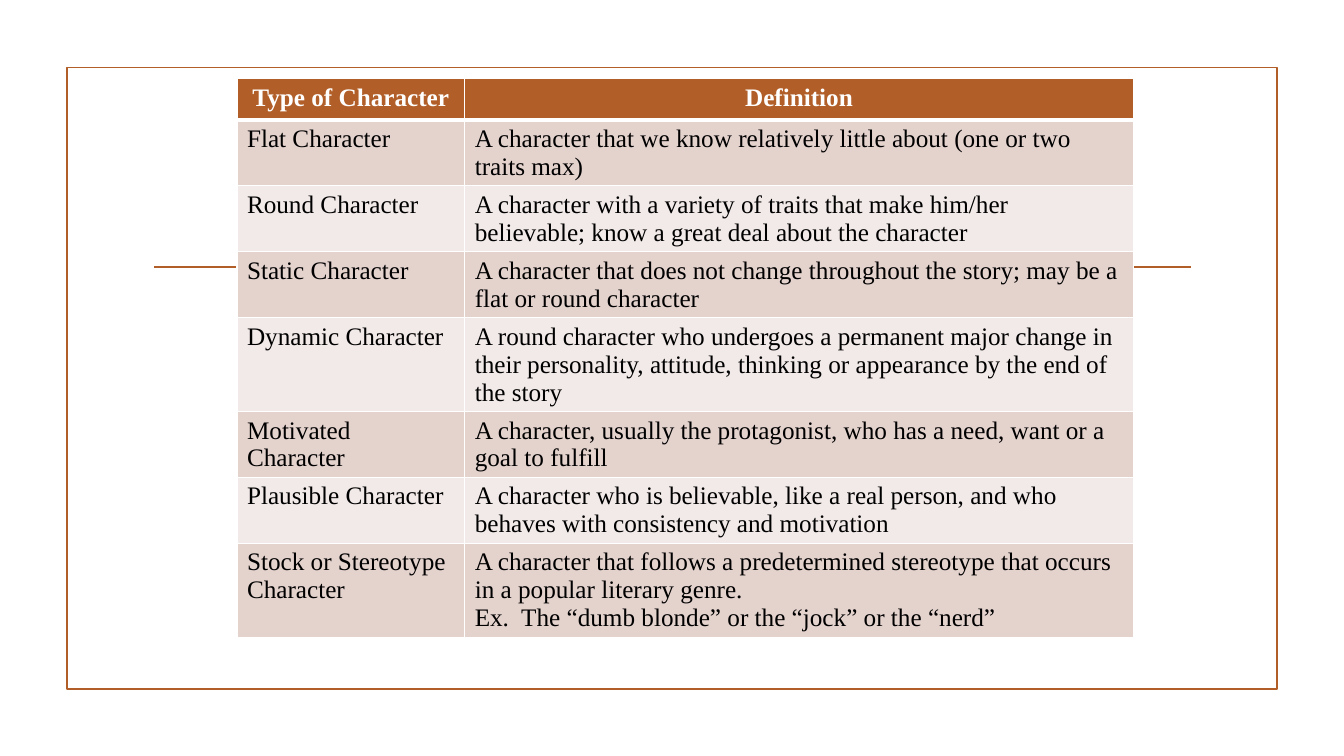
from dataclasses import dataclass

from lxml import etree
from pptx import Presentation
from pptx.dml.color import RGBColor
from pptx.enum.shapes import MSO_CONNECTOR, MSO_SHAPE
from pptx.enum.text import PP_ALIGN
from pptx.oxml.ns import qn
from pptx.util import Inches, Pt

RECTANGLE = MSO_SHAPE.RECTANGLE
STRAIGHT = MSO_CONNECTOR.STRAIGHT
CENTER = PP_ALIGN.CENTER
LEFT = PP_ALIGN.LEFT

SLIDE_WIDTH = Inches(13.33)
SLIDE_HEIGHT = Inches(7.5)


@dataclass(frozen=True)
class Theme:
    """Colours, type and line weights of the slide."""

    accent: str = "B15E28"
    paper: str = "FFFFFF"
    ink: str = "000000"
    bands: tuple = ("E4D2CD", "F2EAE8")
    font: str = "Times New Roman"
    size: float = 18
    rule: float = 1.25
    grid: float = 1
    header_rule: float = 3


THEME = Theme()

HEADINGS = ("Type of Character", "Definition")
COLUMN_SHARES = (16.95, 49.74)
HEADER_SHARE = 5.47
LINE_SHARE = 3.69
PADDING_SHARE = 1.33

CHARACTERS = (
    ("Flat Character", "A character that we know relatively little about (one or two traits max)", 2),
    ("Round Character", "A character with a variety of traits that make him/her believable; "
     "know a great deal about the character", 2),
    ("Static Character", "A character that does not change throughout the story; "
     "may be a flat or round character", 2),
    ("Dynamic Character", "A round character who undergoes a permanent major change in their "
     "personality, attitude, thinking or appearance by the end of the story", 3),
    ("Motivated Character", "A character, usually the protagonist, who has a need, "
     "want or a goal to fulfill", 2),
    ("Plausible Character", "A character who is believable, like a real person, "
     "and who behaves with consistency and motivation", 2),
    ("Stock or Stereotype Character", "A character that follows a predetermined stereotype "
     "that occurs in a popular literary genre.\n"
     "Ex.  The “dumb blonde” or the “jock” or the “nerd”", 3),
)


def across(share):
    """Return a percentage of the slide width."""
    return int(SLIDE_WIDTH * share / 100)


def down(share):
    """Return a percentage of the slide height."""
    return int(SLIDE_HEIGHT * share / 100)


def color(code):
    """Return the colour for a hex code."""
    return RGBColor.from_string(code)


def style_rule(line):
    """Give a line the accent colour and weight."""
    line.color.rgb = color(THEME.accent)
    line.width = Pt(THEME.rule)


def add_frame(slide, left, top, width, height):
    """Draw an unfilled accent frame."""
    frame = slide.shapes.add_shape(RECTANGLE, across(left), down(top), across(width), down(height))
    frame.shadow.inherit = False
    frame.fill.background()
    style_rule(frame.line)


def add_rule(slide, start, end, height):
    """Draw a horizontal accent rule."""
    rule = slide.shapes.add_connector(STRAIGHT, across(start), down(height), across(end), down(height))
    style_rule(rule.line)
    etree.SubElement(rule._element.spPr, qn("a:effectLst"))


def set_borders(cell, top, bottom):
    """Outline a cell in the paper colour."""
    weights = {"L": THEME.grid, "R": THEME.grid, "T": top, "B": bottom}
    properties = cell._tc.get_or_add_tcPr()
    for position, (side, weight) in enumerate(weights.items()):
        border = etree.Element(qn(f"a:ln{side}"), w=str(Pt(weight)))
        fill = etree.SubElement(border, qn("a:solidFill"))
        etree.SubElement(fill, qn("a:srgbClr"), val=THEME.paper)
        properties.insert(position, border)


def fill_cell(cell, text, fill, ink, bold, alignment):
    """Write and format the text of a cell."""
    cell.fill.solid()
    cell.fill.fore_color.rgb = color(fill)
    cell.text_frame.text = text
    for paragraph in cell.text_frame.paragraphs:
        paragraph.alignment = alignment
        for run in paragraph.runs:
            run.font.name = THEME.font
            run.font.size = Pt(THEME.size)
            run.font.bold = bold
            run.font.color.rgb = color(ink)


def add_character_table(slide, left, top):
    """Lay out the character types and their definitions."""
    row_shares = [HEADER_SHARE] + [PADDING_SHARE + LINE_SHARE * lines for *_, lines in CHARACTERS]
    table = slide.shapes.add_table(
        len(row_shares), len(HEADINGS), across(left), down(top),
        across(sum(COLUMN_SHARES)), down(sum(row_shares))).table
    for column, share in zip(table.columns, COLUMN_SHARES):
        column.width = across(share)
    for row, share in zip(table.rows, row_shares):
        row.height = down(share)
    for cell, heading in zip(table.rows[0].cells, HEADINGS):
        fill_cell(cell, heading, THEME.accent, THEME.paper, True, CENTER)
        set_borders(cell, THEME.grid, THEME.header_rule)
    for index, (kind, definition, _) in enumerate(CHARACTERS):
        band = THEME.bands[index % len(THEME.bands)]
        upper = THEME.grid if index else THEME.header_rule
        for cell, text in zip(table.rows[index + 1].cells, (kind, definition)):
            fill_cell(cell, text, band, THEME.ink, False, LEFT)
            set_borders(cell, upper, THEME.grid)


def main():
    """Build and save the slide."""
    deck = Presentation()
    deck.slide_width = SLIDE_WIDTH
    deck.slide_height = SLIDE_HEIGHT
    slide = deck.slides.add_slide(deck.slide_layouts[6])
    add_frame(slide, 4.98, 8.93, 90.02, 82.27)
    add_rule(slide, 11.48, 88.6, 35.33)
    add_character_table(slide, 17.63, 10.4)
    deck.save("out.pptx")


if __name__ == "__main__":
    main()
